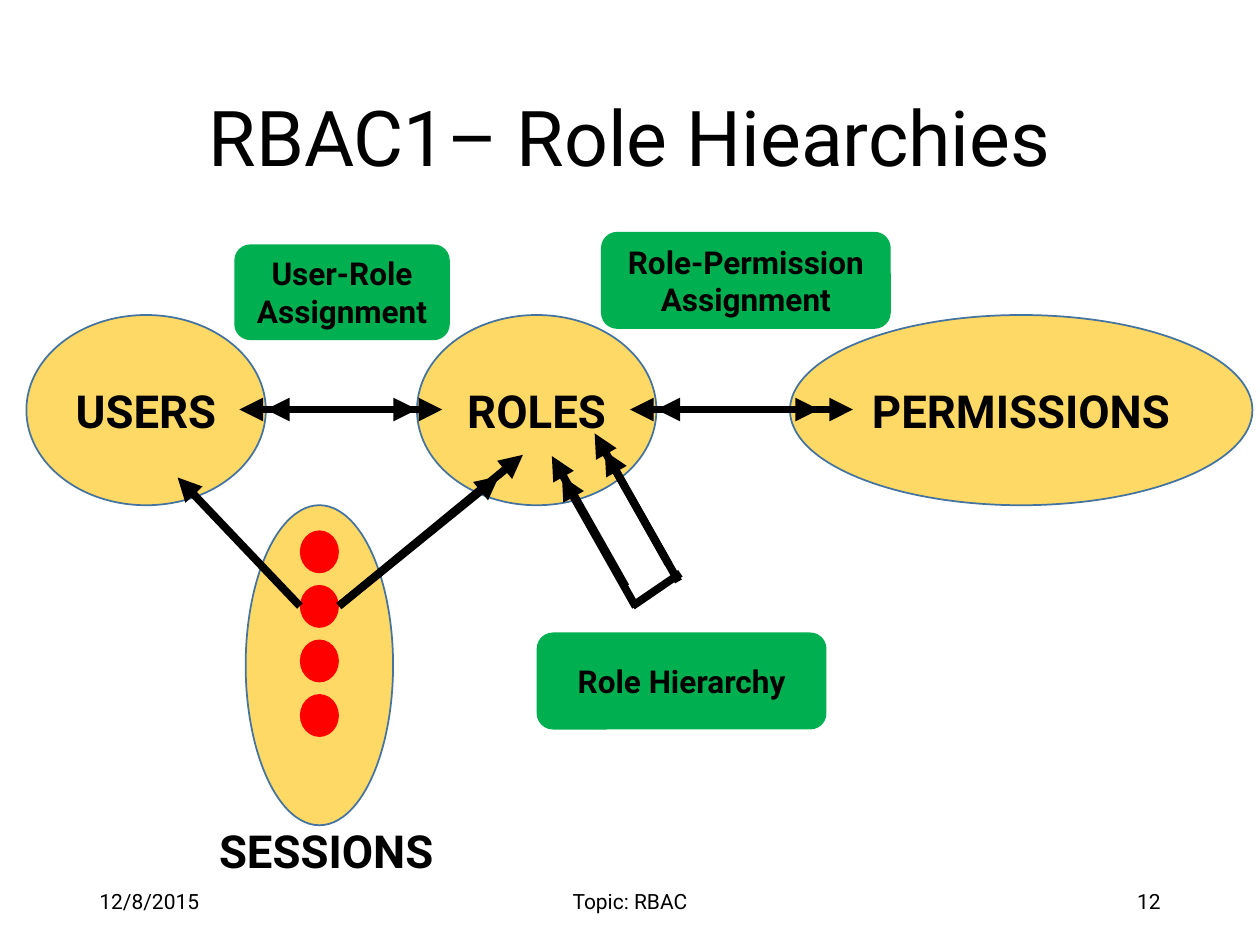
from dataclasses import dataclass

from lxml.etree import SubElement
from pptx import Presentation
from pptx.dml.color import RGBColor
from pptx.enum.shapes import MSO_CONNECTOR as Line, MSO_SHAPE as Geo
from pptx.enum.text import MSO_ANCHOR as Anchor, PP_ALIGN as Align
from pptx.oxml.ns import qn
from pptx.util import Inches, Pt

COLS, ROWS = 100, 75
WIDTH, HEIGHT = Inches(10), Inches(7.5)


@dataclass(frozen=True)
class Theme:
    font: str = "Roboto"
    ink: str = "000000"
    entity: str = "FFD966"
    outline: str = "43739E"
    label: str = "00B050"
    session: str = "FF0000"
    title_size: int = 44
    entity_size: int = 26
    label_size: int = 18
    footer_size: int = 12
    arrow_width: float = 4.5


THEME = Theme()


def x(cols):
    return round(WIDTH * cols / COLS)


def y(rows):
    return round(HEIGHT * rows / ROWS)


def box(left, top, width, height):
    return x(left), y(top), x(width), y(height)


def rgb(value):
    return RGBColor.from_string(value)


def set_all(obj, values):
    for name, value in values.items():
        setattr(obj, name, value)


def write(s, text, size, bold=False, align=Align.CENTER, spacing=None, **frame):
    """Put one paragraph in a shape; frame holds further text frame values."""
    tf = s.text_frame
    set_all(tf, {"word_wrap": True, "vertical_anchor": Anchor.MIDDLE, **frame})
    p = tf.paragraphs[0]
    set_all(p, {"alignment": align, "line_spacing": spacing})
    r = p.add_run()
    r.text = text
    set_all(r.font, {"name": THEME.font, "size": Pt(size), "bold": bold})
    r.font.color.rgb = rgb(THEME.ink)


def add_text(slide, at, text, size, **style):
    write(slide.shapes.add_textbox(*box(*at)), text, size, **style)


def add_filled(slide, geo, at, fill, outline=None):
    s = slide.shapes.add_shape(geo, *box(*at))
    s.shadow.inherit = False
    s.fill.solid()
    s.fill.fore_color.rgb = rgb(fill)
    if outline:
        s.line.color.rgb = rgb(outline)
        s.line.width = Pt(1)
    else:
        s.line.fill.background()
    return s


def add_entity(slide, at, text=None):
    s = add_filled(slide, Geo.OVAL, at, THEME.entity, THEME.outline)
    if text:
        write(s, text, THEME.entity_size, bold=True, margin_left=0, margin_right=0)


def add_label(slide, at, text):
    s = add_filled(slide, Geo.ROUNDED_RECTANGLE, at, THEME.label)
    write(s, text, THEME.label_size, bold=True)


def add_arrow(slide, start, end, *ends):
    """Draw a line with a triangle at each of the ends, "headEnd" before "tailEnd"."""
    c = slide.shapes.add_connector(
        Line.STRAIGHT, x(start[0]), y(start[1]), x(end[0]), y(end[1]))
    c.line.color.rgb = rgb(THEME.ink)
    c.line.width = Pt(THEME.arrow_width)
    ln = c.line._get_or_add_ln()
    for name in ends:
        SubElement(ln, qn(f"a:{name}"), type="triangle")
    SubElement(c._element.spPr, qn("a:effectLst"))


def add_title_and_footer(slide):
    add_text(slide, (6.9, 4, 86.2, 14.5), "RBAC1– Role Hiearchies",
             THEME.title_size, spacing=0.9)
    for left, width, text, align in (
        (6.9, 22.5, "12/8/2015", Align.LEFT),
        (33.1, 33.8, "Topic: RBAC", Align.CENTER),
        (70.6, 22.5, "12", Align.RIGHT),
    ):
        add_text(slide, (left, 69.5, width, 4), text, THEME.footer_size, align=align)


def add_entities(slide):
    for left, width, text in (
        (2.1, 19, "USERS"), (33.1, 19, "ROLES"), (62.7, 36.7, "PERMISSIONS"),
    ):
        add_entity(slide, (left, 25, width, 15.1), text)


def add_sessions(slide):
    add_entity(slide, (19.5, 40.1, 11.7, 25.4))
    add_text(slide, (16.4, 64.8, 19.2, 5.4), "SESSIONS", THEME.entity_size, bold=True,
             align=Align.LEFT, word_wrap=False, vertical_anchor=Anchor.TOP)
    for i in range(4):
        add_filled(slide, Geo.FLOWCHART_CONNECTOR,
                   (23.8, 42.1 + 4.33 * i, 3.1, 3.4), THEME.session)


def add_assignment_arrows(slide):
    for left, right in ((52.1, 65), (21.1, 33.1), (50, 67.7), (19, 35.1)):
        add_arrow(slide, (left, 32.5), (right, 32.5), "headEnd", "tailEnd")


def add_session_arrows(slide):
    for start, end in ((23.8, (14.1, 37.9)), (26.9, (39.6, 37.8)), (26.9, (41.5, 36.1))):
        add_arrow(slide, (start, 48.1), end, "tailEnd")


def add_hierarchy_arrows(slide):
    run, drop = 5.85, 10.35
    for left, top in ((44.6, 37.8), (47.2, 34.4), (48, 35.8), (43.8, 36.2)):
        add_arrow(slide, (left, top), (left + run, top + drop), "headEnd")
    add_arrow(slide, (50.2, 48.1), (54, 45.5))


def main():
    prs = Presentation()
    set_all(prs, {"slide_width": WIDTH, "slide_height": HEIGHT})
    slide = prs.slides.add_slide(prs.slide_layouts[6])
    add_title_and_footer(slide)
    add_entities(slide)
    add_sessions(slide)
    add_assignment_arrows(slide)
    add_session_arrows(slide)
    add_label(slide, (18.6, 19.4, 17.1, 7.6), "User-Role Assignment")
    add_label(slide, (47.7, 18.4, 23, 7.7), "Role-Permission Assignment")
    add_hierarchy_arrows(slide)
    add_label(slide, (42.6, 50.2, 23, 7.7), "Role Hierarchy")
    prs.save("out.pptx")


if __name__ == "__main__":
    main()
